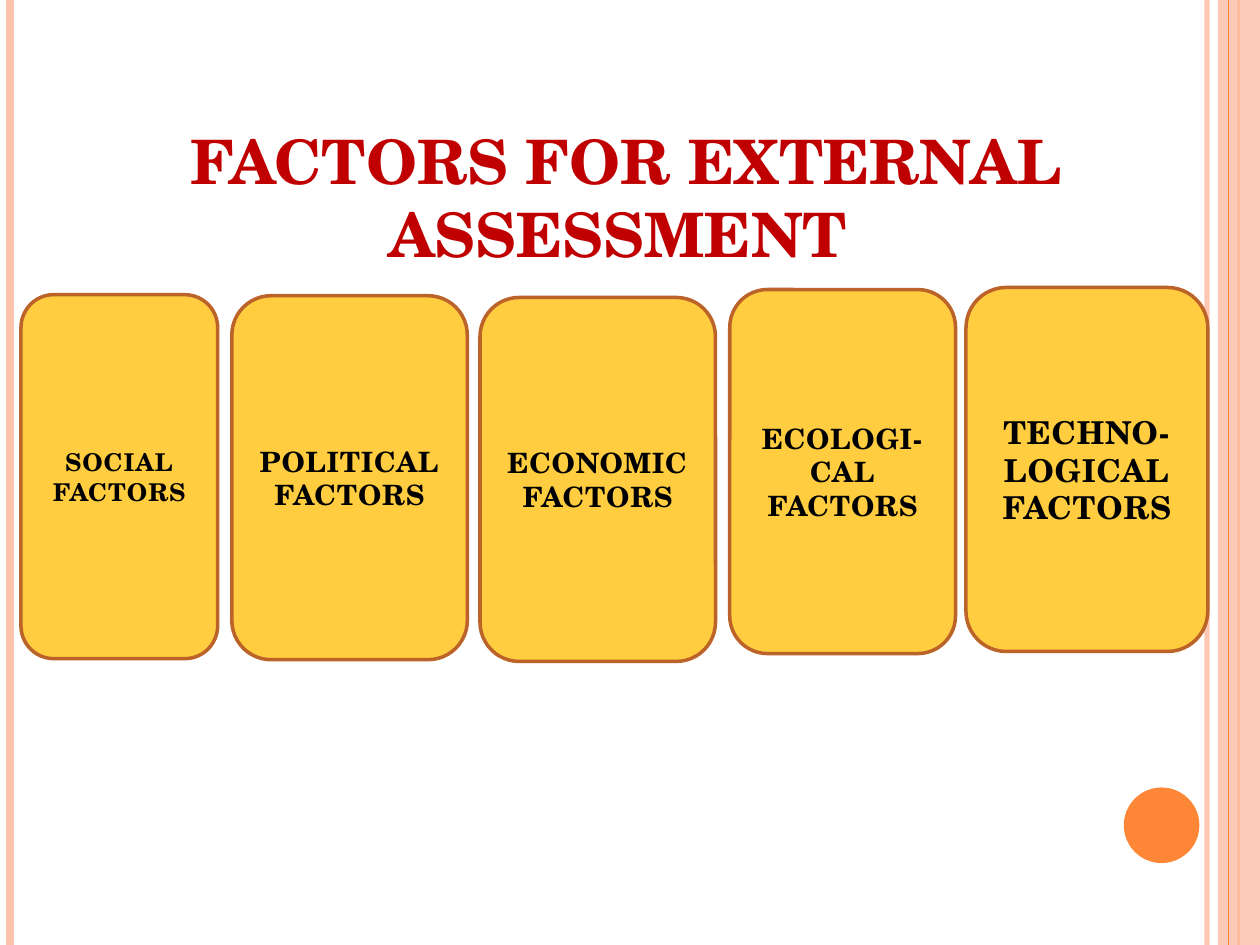
from typing import NamedTuple

from lxml import etree
from pptx import Presentation
from pptx.dml.color import RGBColor
from pptx.enum.shapes import MSO_CONNECTOR, MSO_SHAPE
from pptx.enum.text import MSO_ANCHOR, MSO_AUTO_SIZE, PP_ALIGN
from pptx.oxml.ns import qn
from pptx.util import Pt

LINE = MSO_CONNECTOR.STRAIGHT
RECT = MSO_SHAPE.RECTANGLE
OVAL = MSO_SHAPE.OVAL
ROUND = MSO_SHAPE.ROUNDED_RECTANGLE
MID = MSO_ANCHOR.MIDDLE
FIXED = MSO_AUTO_SIZE.NONE
CENTER = PP_ALIGN.CENTER

FONT = "TeX Gyre Schola"
PINK, ORANGE = "FEC3AE", "FE8637"
GOLD, BROWN = "FFCD3F", "BC6329"
RED, BLACK = "C00000", "000000"
WIDE, HIGH = 720, 540
CARD_H = 208


class Rule(NamedTuple):
    x: float
    color: str
    width: float
    alpha: int = 100


class Card(NamedTuple):
    text: str
    x: float
    y: float
    width: float
    size: int


LEFT_RULES = [Rule(689.8, PINK, 3, 93), Rule(5.8, PINK, 4.5),
              Rule(707.8, ORANGE, 1.5)]
TOP_RULE = Rule(702, ORANGE, 0.75)

CARDS = [
    Card("SOCIAL FACTORS", 12, 168.4, 112.4, 14),
    Card("POLITICAL FACTORS", 132.5, 169, 134.6, 16),
    Card("ECONOMIC FACTORS", 274.3, 170, 134.6, 16),
    Card("ECOLOGI-CAL FACTORS", 417, 165.5, 129, 16),
    Card("TECHNO-LOGICAL FACTORS", 552, 164.3, 138.2, 18),
]


def paint(part, color: str, alpha: int = 100) -> None:
    """Give a fill or font a solid colour, clear when alpha is below 100."""
    if hasattr(part, "solid"):
        part.solid()
        tone = part.fore_color
    else:
        tone = part.color
    tone.rgb = RGBColor.from_string(color)
    if alpha < 100:
        node = part._xPr.find(".//" + qn("a:srgbClr"))
        etree.SubElement(node, qn("a:alpha")).set("val", str(alpha * 1000))


def draw_rule(slide, rule: Rule) -> None:
    line = slide.shapes.add_connector(
        LINE, Pt(rule.x), Pt(0), Pt(rule.x), Pt(HIGH))
    line.line.width = Pt(rule.width)
    paint(line.line.fill, rule.color, rule.alpha)
    etree.SubElement(line._element.spPr, qn("a:effectLst"))


def draw_shape(slide, kind, x: float, y: float, width: float, height: float,
               color: str, alpha: int = 100):
    shape = slide.shapes.add_shape(kind, Pt(x), Pt(y), Pt(width), Pt(height))
    shape.shadow.inherit = False
    paint(shape.fill, color, alpha)
    shape.line.fill.background()
    return shape


def write(shape, text: str, size: int, color: str, gap: float = 0) -> None:
    frame = shape.text_frame
    frame.word_wrap = True
    frame.auto_size = FIXED
    frame.vertical_anchor = MID
    para = frame.paragraphs[0]
    para.alignment = CENTER
    run = para.add_run()
    run.text = text
    run.font.name = FONT
    run.font.size = Pt(size)
    run.font.bold = True
    paint(run.font, color)
    if gap:
        run._r.get_or_add_rPr().set("spc", str(int(gap * 100)))


def draw_card(slide, card: Card) -> None:
    shape = draw_shape(slide, ROUND, card.x, card.y, card.width, CARD_H, GOLD)
    shape.line.width = Pt(2)
    paint(shape.line.fill, BROWN)
    write(shape, card.text, card.size, BLACK, 0.5)


def main() -> None:
    deck = Presentation()
    deck.slide_width, deck.slide_height = Pt(WIDE), Pt(HIGH)
    slide = deck.slides.add_slide(deck.slide_layouts[5])

    # Side bands and disc
    for rule in LEFT_RULES:
        draw_rule(slide, rule)
    draw_shape(slide, RECT, 696, 0, 24, HIGH, PINK, 87)
    draw_rule(slide, TOP_RULE)
    draw_shape(slide, OVAL, 642.2, 450, 43.2, 43.2, ORANGE)

    # Factor cards
    for card in CARDS:
        draw_card(slide, card)

    # Title
    title = slide.shapes.title
    title.left, title.top = Pt(49.7), Pt(66.2)
    title.width, title.height = Pt(616.3), Pt(92.2)
    write(title, "FACTORS FOR EXTERNAL ASSESSMENT ", 35, RED)

    deck.save("out.pptx")


if __name__ == "__main__":
    main()
